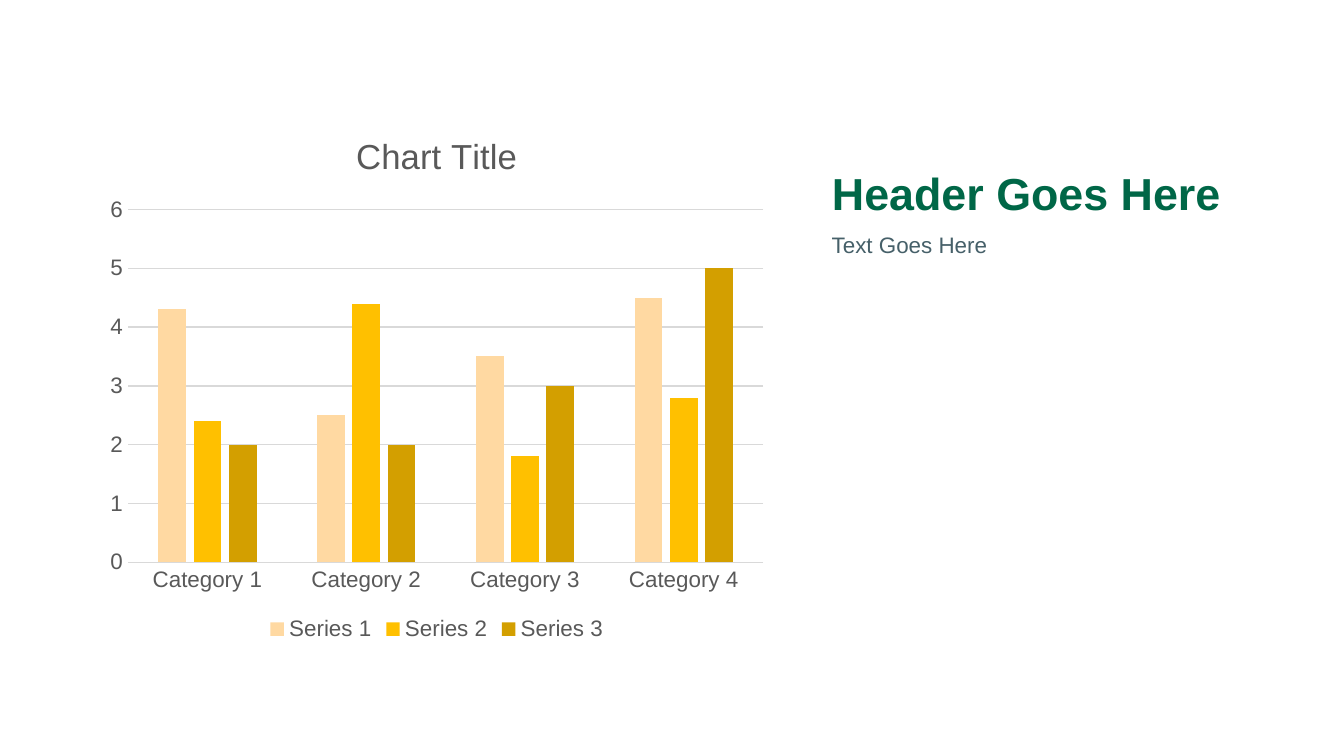
import pptx
import pptx.chart.data
import pptx.dml.color
import pptx.enum.chart
import pptx.enum.text
import pptx.util

HEADER = "Header Goes Here"
BODY = "Text Goes Here"
CHART_TITLE = "Chart Title"
CATEGORIES = ["Category 1", "Category 2", "Category 3", "Category 4"]
SERIES = [
    ("Series 1", (4.3, 2.5, 3.5, 4.5), "peach"),
    ("Series 2", (2.4, 4.4, 1.8, 2.8), "amber"),
    ("Series 3", (2, 2, 3, 5), "ochre"),
]
COLORS = {
    "background": "FFFFFF", "header": "006747", "body": "466069",
    "label": "595959", "rule": "D9D9D9",
    "peach": "FFD9A2", "amber": "FFC000", "ochre": "D39F00",
}
FONT = "Arial"
WIDTH = 10
HEIGHT = WIDTH * 9 / 16
TOP = 0.81
CHART_BOX = (0.72, TOP, 5.06, 4)
TEXT_LEFT, TEXT_WIDTH = 6.09, 3.23
HEADER_HEIGHT, BODY_HEIGHT = 0.88, 3.13


def color(name):
    return pptx.dml.color.RGBColor.from_string(COLORS[name])


def inches(box):
    return [pptx.util.Inches(length) for length in box]


def style_font(font, size, name, bold=False):
    font.name = FONT
    font.size = pptx.util.Pt(size)
    font.bold = bold
    font.color.rgb = color(name)


def style_line(line, name):
    line.color.rgb = color(name)
    line.width = pptx.util.Pt(0.75)


def fill_text(shape, text, size, name, anchor, bold=False):
    frame = shape.text_frame
    frame.text = text
    frame.word_wrap = True
    frame.auto_size = pptx.enum.text.MSO_AUTO_SIZE.NONE
    frame.vertical_anchor = anchor
    paragraph = frame.paragraphs[0]
    paragraph.alignment = pptx.enum.text.PP_ALIGN.LEFT
    paragraph.line_spacing = 0.9
    style_font(paragraph.font, size, name, bold)


def add_column_chart(slide):
    data = pptx.chart.data.CategoryChartData()
    data.categories = CATEGORIES
    for name, values, _ in SERIES:
        data.add_series(name, values)
    chart = slide.shapes.add_chart(
        pptx.enum.chart.XL_CHART_TYPE.COLUMN_CLUSTERED, *inches(CHART_BOX), data
    ).chart
    style_font(chart.font, 12, "label")

    chart.has_title = True
    chart.chart_title.include_in_layout = False
    chart.chart_title.text_frame.text = CHART_TITLE
    style_font(chart.chart_title.text_frame.paragraphs[0].font, 18.6, "label")

    chart.has_legend = True
    chart.legend.position = pptx.enum.chart.XL_LEGEND_POSITION.BOTTOM
    chart.legend.include_in_layout = False
    style_font(chart.legend.font, 12, "label")

    for axis in (chart.category_axis, chart.value_axis):
        axis.major_tick_mark = pptx.enum.chart.XL_TICK_MARK.NONE
        axis.minor_tick_mark = pptx.enum.chart.XL_TICK_MARK.NONE
        style_font(axis.tick_labels.font, 12, "label")
    style_line(chart.category_axis.format.line, "rule")
    chart.value_axis.format.line.fill.background()
    style_line(chart.value_axis.major_gridlines.format.line, "rule")

    plot = chart.plots[0]
    plot.gap_width = 219
    plot.overlap = -27
    plot.vary_by_categories = False
    for series, (_, _, fill) in zip(plot.series, SERIES):
        series.format.fill.solid()
        series.format.fill.fore_color.rgb = color(fill)


def main():
    deck = pptx.Presentation()
    deck.slide_width, deck.slide_height = inches((WIDTH, HEIGHT))
    slide = deck.slides.add_slide(deck.slide_layouts[5])
    slide.background.fill.solid()
    slide.background.fill.fore_color.rgb = color("background")

    header = slide.shapes.title
    header.left, header.top, header.width, header.height = inches(
        (TEXT_LEFT, TOP, TEXT_WIDTH, HEADER_HEIGHT))
    fill_text(header, HEADER, 24, "header", pptx.enum.text.MSO_ANCHOR.BOTTOM, bold=True)

    body = slide.shapes.add_textbox(*inches(
        (TEXT_LEFT, TOP + HEADER_HEIGHT, TEXT_WIDTH, BODY_HEIGHT)))
    fill_text(body, BODY, 12, "body", pptx.enum.text.MSO_ANCHOR.TOP)

    add_column_chart(slide)
    deck.save("out.pptx")


if __name__ == "__main__":
    main()
